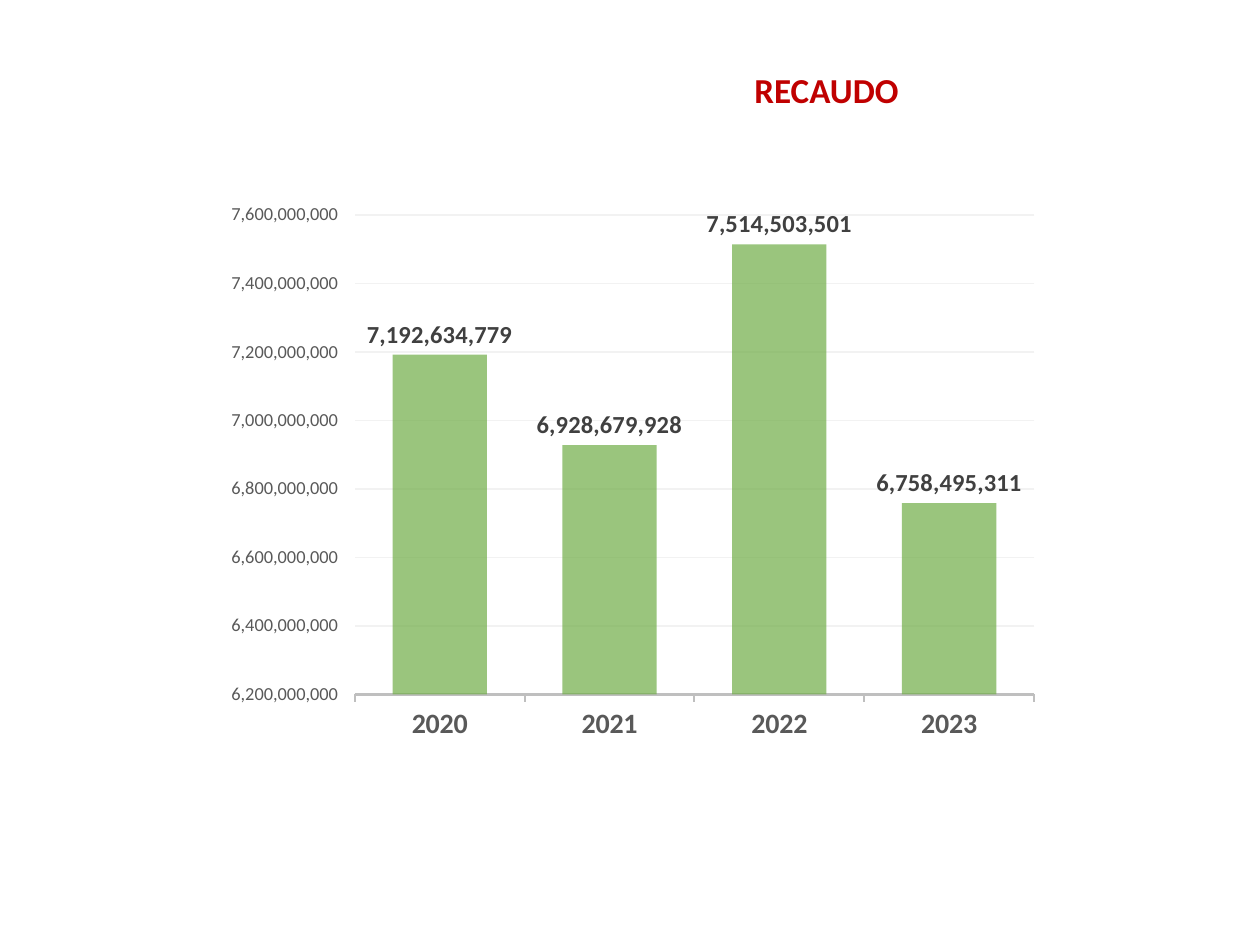
from typing import NamedTuple

from lxml.etree import SubElement
from pptx import Presentation
from pptx.chart.data import CategoryChartData
from pptx.dml.color import RGBColor
from pptx.enum.chart import XL_CHART_TYPE, XL_LABEL_POSITION, XL_TICK_MARK
from pptx.enum.text import MSO_ANCHOR, PP_ALIGN
from pptx.oxml.ns import qn
from pptx.util import Pt

FONT = "Calibri"
HUES = {"title": "C00000", "bar": "70AD47", "axis": "595959", "label": "404040",
        "line": "BFBFBF", "grid": "F2F2F2", "base": "000000"}
FORMAT = '_-* #,##0_-;\\-* #,##0_-;_-* "-"??_-;_-@_'


class Box(NamedTuple):
    left: float
    top: float
    width: float
    height: float

    def points(self) -> list:
        return [Pt(side) for side in self]


class Year(NamedTuple):
    name: str
    total: int


TITLE = Box(273.6, 28.8, 397.44, 48.24)
CHART = Box(120.24, 110.16, 480.24, 319.68)
YEARS = [Year("2020", 7192634779), Year("2021", 6928679928),
         Year("2022", 7514503501), Year("2023", 6758495311)]


def color(key: str) -> RGBColor:
    return RGBColor.from_string(HUES[key])


def style(font, size: float, key: str, bold: bool = False) -> None:
    font.name, font.size, font.bold = FONT, Pt(size), bold
    font.color.rgb = color(key)


def stroke(line, key: str, width: float) -> None:
    line.color.rgb = color(key)
    line.width = Pt(width)


def add_title(slide, text: str) -> None:
    frame = slide.shapes.add_textbox(*TITLE.points()).text_frame
    frame.word_wrap = True
    frame.vertical_anchor = MSO_ANCHOR.MIDDLE
    line = frame.paragraphs[0]
    line.text = text
    line.alignment = PP_ALIGN.CENTER
    line.line_spacing = 0.9
    style(line.font, 20, "title", True)


def style_axes(chart) -> None:
    years = chart.category_axis
    years.major_tick_mark = XL_TICK_MARK.OUTSIDE
    stroke(years.format.line, "line", 1.25)
    style(years.tick_labels.font, 16, "axis", True)

    totals = chart.value_axis
    totals.minimum_scale, totals.maximum_scale = 6.2e9, 7.6e9
    totals.major_unit = 2e8
    totals.major_tick_mark = XL_TICK_MARK.OUTSIDE
    totals.format.line.fill.background()
    stroke(totals.major_gridlines.format.line, "grid", 0.75)
    totals.tick_labels.number_format = FORMAT
    totals.tick_labels.number_format_is_linked = False
    style(totals.tick_labels.font, 10.5, "axis")


def style_bars(plot) -> None:
    plot.gap_width, plot.overlap = 80, 25
    plot.vary_by_categories = False
    bars = plot.series[0]
    bars.invert_if_negative = False
    fill = bars.format.fill
    fill.solid()
    fill.fore_color.rgb = color("bar")
    tint = next(bars.format.element.iter(qn("a:srgbClr")), None) if hasattr(
        bars.format, "element") else next(plot.series[0].points[0].data_label
                                          ._ser.iter(qn("a:srgbClr")))
    SubElement(tint, qn("a:alpha"), val="70000")

    labels = bars.data_labels
    labels.show_value = True
    labels.position = XL_LABEL_POSITION.OUTSIDE_END
    labels.number_format = "#,##0"
    labels.number_format_is_linked = False
    style(labels.font, 14, "label", True)


def add_chart(slide, years: list[Year]) -> None:
    data = CategoryChartData(number_format=FORMAT)
    data.categories = [year.name for year in years]
    data.add_series("Series 1", [year.total for year in years])
    chart = slide.shapes.add_chart(
        XL_CHART_TYPE.COLUMN_CLUSTERED, *CHART.points(), data).chart
    chart.has_title = chart.has_legend = False
    style(chart.font, 10, "base")
    style_axes(chart)
    style_bars(chart.plots[0])


def main() -> None:
    """Build the slide of yearly collection totals."""
    deck = Presentation()
    deck.slide_width, deck.slide_height = Pt(720), Pt(540)
    slide = deck.slides.add_slide(deck.slide_layouts[6])
    add_title(slide, "RECAUDO")
    add_chart(slide, YEARS)
    deck.save("out.pptx")


if __name__ == "__main__":
    main()
